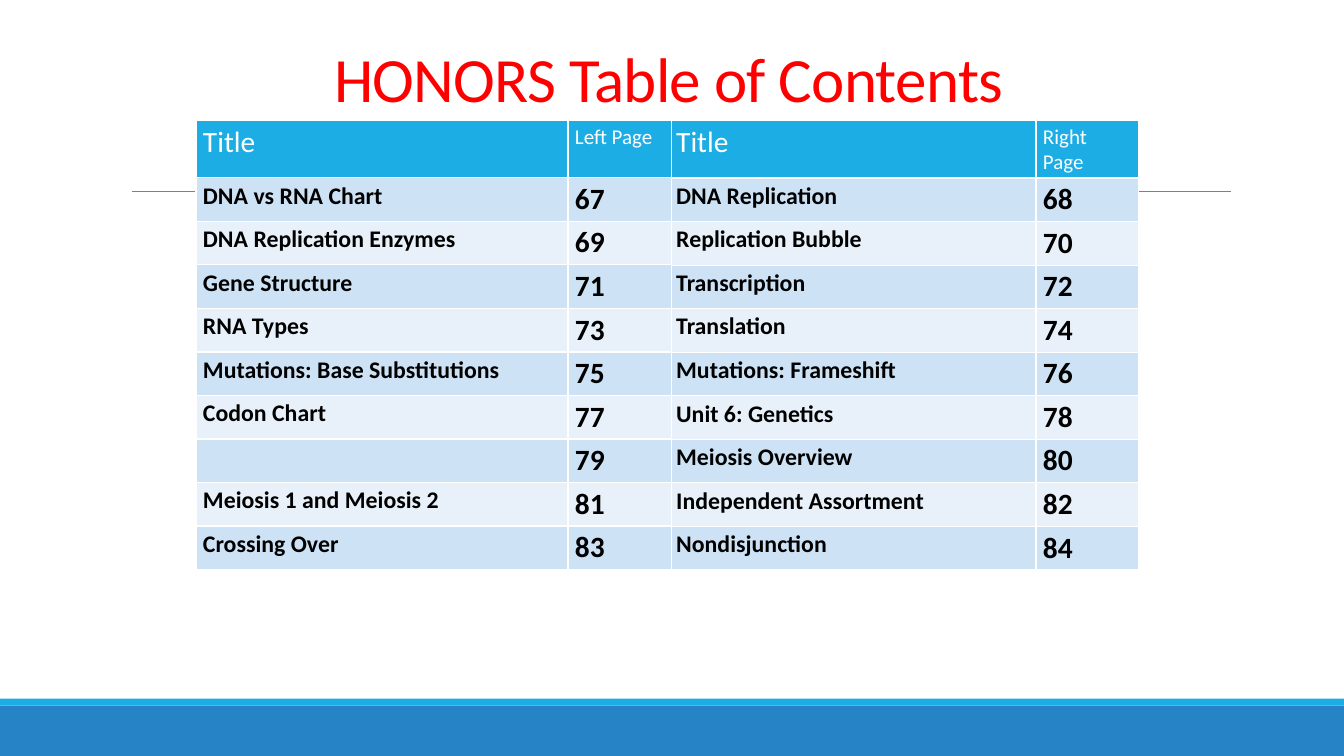
from lxml import etree
from pptx import Presentation
from pptx.dml.color import RGBColor
from pptx.enum.shapes import MSO_CONNECTOR, MSO_SHAPE
from pptx.enum.text import MSO_ANCHOR, PP_ALIGN
from pptx.oxml.ns import qn
from pptx.util import Pt

RECT = MSO_SHAPE.RECTANGLE
STRAIGHT = MSO_CONNECTOR.STRAIGHT
BOTTOM = MSO_ANCHOR.BOTTOM
CENTER = PP_ALIGN.CENTER

WHITE = RGBColor(0xFF, 0xFF, 0xFF)
BLACK = RGBColor(0, 0, 0)
RED = RGBColor(0xFF, 0, 0)
GRAY = RGBColor(0x80, 0x80, 0x80)
BLUE = RGBColor(0x26, 0x83, 0xC6)
CYAN = RGBColor(0x1C, 0xAD, 0xE4)
BANDS = (RGBColor(0xCD, 0xE3, 0xF5), RGBColor(0xE8, 0xF1, 0xFA))

SLIDE_W, SLIDE_H = 960, 540
TABLE_TOP, HEADER_H, ROW_H = 86, 41, 31.1

LEFT_TITLES = ("DNA vs RNA Chart", "DNA Replication Enzymes", "Gene Structure",
               "RNA Types", "Mutations: Base Substitutions", "Codon Chart", "",
               "Meiosis 1 and Meiosis 2", "Crossing Over")
RIGHT_TITLES = ("DNA Replication", "Replication Bubble", "Transcription",
                "Translation", "Mutations: Frameshift", "Unit 6: Genetics",
                "Meiosis Overview", "Independent Assortment", "Nondisjunction")


class ContentsSlide:
    font = "Calibri"

    def __init__(self, prs):
        self.s = prs.slides.add_slide(prs.slide_layouts[6])

    def band(self, top, height, color):
        sp = self.s.shapes.add_shape(RECT, 0, Pt(top), Pt(SLIDE_W), Pt(height))
        sp.shadow.inherit = False
        sp.fill.solid()
        sp.fill.fore_color.rgb = color
        sp.line.fill.background()

    def rule(self, x1, x2, y):
        line = self.s.shapes.add_connector(STRAIGHT, Pt(x1), Pt(y), Pt(x2), Pt(y))
        line.line.color.rgb = GRAY
        line.line.width = Pt(0.5)
        etree.SubElement(line._element.spPr, qn("a:effectLst"))

    def run(self, p, text, size, color, bold=False):
        r = p.add_run()
        r.text = text
        r.font.name = self.font
        r.font.size = Pt(size)
        r.font.bold = bold
        r.font.color.rgb = color
        return r

    def title(self, text, left, top, width, height):
        sp = self.s.shapes.add_textbox(Pt(left), Pt(top), Pt(width), Pt(height))
        tf = sp.text_frame
        tf.word_wrap = True
        tf.vertical_anchor = BOTTOM
        p = tf.paragraphs[0]
        p.alignment = CENTER
        p.line_spacing = 0.85
        r = self.run(p, text, 45, RED)
        r.font._element.set("spc", "-50")

    def cell(self, cell, text, size, color, fill, bold):
        cell.margin_left = cell.margin_right = Pt(5)
        cell.margin_top = cell.margin_bottom = Pt(2.6)
        if text:
            self.run(cell.text_frame.paragraphs[0], text, size, color, bold)
        tcPr = cell._tc.get_or_add_tcPr()
        for side in "LRTB":
            ln = etree.SubElement(tcPr, qn(f"a:ln{side}"), w=str(Pt(1)))
            solid = etree.SubElement(ln, qn("a:solidFill"))
            etree.SubElement(solid, qn("a:srgbClr"), val=str(WHITE))
        cell.fill.solid()
        cell.fill.fore_color.rgb = fill

    def contents_table(self, left, widths, page_heading, titles, first_page):
        rows = len(titles) + 1
        height = HEADER_H + ROW_H * len(titles)
        table = self.s.shapes.add_table(rows, 2, Pt(left), Pt(TABLE_TOP),
                                        Pt(sum(widths)), Pt(height)).table
        for column, width in zip(table.columns, widths):
            column.width = Pt(width)
        for i, row in enumerate(table.rows):
            row.height = Pt(ROW_H if i else HEADER_H)
        for col, (text, size) in enumerate((("Title", 21), (page_heading, 15))):
            self.cell(table.cell(0, col), text, size, WHITE, CYAN, False)
        for i, text in enumerate(titles):
            fill = BANDS[i % 2]
            page = str(first_page + 2 * i)
            self.cell(table.cell(i + 1, 0), text, 17, BLACK, fill, True)
            self.cell(table.cell(i + 1, 1), page, 21, BLACK, fill, True)


def main():
    prs = Presentation()
    prs.slide_width, prs.slide_height = Pt(SLIDE_W), Pt(SLIDE_H)
    slide = ContentsSlide(prs)
    slide.band(504, 36, BLUE)
    slide.band(499, 5, CYAN)
    slide.rule(94.3, 879, 136.6)
    slide.title("HONORS Table of Contents", 140, 16, 675, 70)
    slide.contents_table(478, (262, 73.4), "Right Page", RIGHT_TITLES, 68)
    slide.contents_table(140, (265.7, 74), "Left Page", LEFT_TITLES, 67)
    prs.save("out.pptx")


if __name__ == "__main__":
    main()
